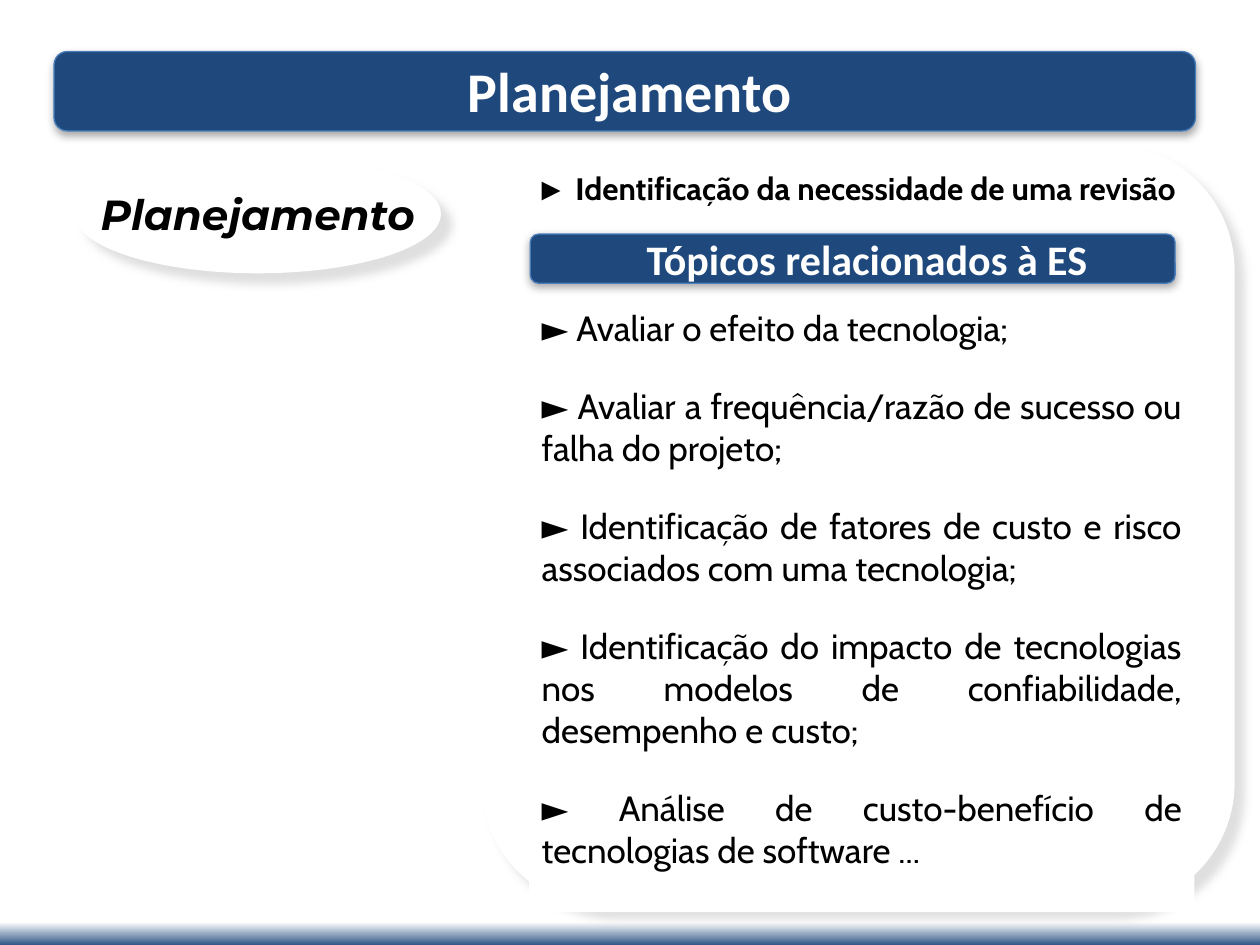
from lxml.etree import SubElement
from pptx import Presentation
from pptx.dml.color import RGBColor
from pptx.enum.shapes import MSO_SHAPE
from pptx.enum.text import MSO_ANCHOR, PP_ALIGN
from pptx.oxml.ns import qn
from pptx.util import Cm, Pt

WHITE = RGBColor(0xFF, 0xFF, 0xFF)
BLACK = RGBColor(0x00, 0x00, 0x00)
NAVY = RGBColor(0x1F, 0x49, 0x7D)
BORDER = RGBColor(0x4A, 0x7E, 0xBB)
SILVER = RGBColor(0xC0, 0xC0, 0xC0)

SOFT_SHADOW = {"color": SILVER, "alpha": 50, "distance": 8.5, "angle": 45}
BANNER_SHADOW = {"color": BLACK, "alpha": 35, "distance": 1.8, "angle": 90}

TOPICS = [
    "Avaliar o efeito da tecnologia;",
    "Avaliar a frequência/razão de sucesso ou falha do projeto;",
    "Identificação de fatores de custo e risco associados com uma tecnologia;",
    "Identificação do impacto de tecnologias nos modelos de confiabilidade, "
    "desempenho e custo;",
    "Análise de custo-benefício de tecnologias de software ...",
]


def add_shadow(shape, color, alpha, distance, angle):
    effects = shape._element.spPr.find(qn("a:effectLst"))
    shadow = SubElement(effects, qn("a:outerShdw"), blurRad=str(Pt(5)),
                        dist=str(Pt(distance)), dir=str(angle * 60000),
                        algn="ctr", rotWithShape="0")
    tint = SubElement(shadow, qn("a:srgbClr"), val=str(color))
    SubElement(tint, qn("a:alpha"), val=str(alpha * 1000))


def add_box(slide, kind, box, fill, line=None, shadow=None):
    """Add a preset shape; box is left, top, width and height in cm."""
    shape = slide.shapes.add_shape(kind, *map(Cm, box))
    shape.shadow.inherit = False
    shape.fill.solid()
    shape.fill.fore_color.rgb = fill
    if line is None:
        shape.line.fill.background()
    else:
        shape.line.color.rgb = line
        shape.line.width = Pt(0.75)
    if shadow:
        add_shadow(shape, **shadow)
    return shape


def add_banner(slide, box):
    return add_box(slide, MSO_SHAPE.ROUNDED_RECTANGLE, box, NAVY, BORDER, BANNER_SHADOW)


def set_frame(shape, **values):
    for name, value in values.items():
        setattr(shape.text_frame, name, value)


def add_run(paragraph, text, color, **font):
    run = paragraph.add_run()
    run.text = text
    run.font.color.rgb = color
    for name, value in font.items():
        setattr(run.font, name, value)


def add_footer(slide, box):
    footer = add_box(slide, MSO_SHAPE.RECTANGLE, box, NAVY)
    footer.fill.gradient()
    footer.fill.gradient_angle = 270
    for stop, position, color in zip(footer.fill.gradient_stops, (0, 1), (WHITE, NAVY)):
        stop.position = position
        stop.color.rgb = color


def add_topic_list(slide, box):
    shape = add_box(slide, MSO_SHAPE.RECTANGLE, box, WHITE)
    set_frame(shape, word_wrap=True, vertical_anchor=MSO_ANCHOR.TOP, margin_top=Cm(1.73))
    frame = shape.text_frame
    for index, topic in enumerate(TOPICS):
        paragraph = frame.add_paragraph() if index else frame.paragraphs[0]
        paragraph.alignment = PP_ALIGN.JUSTIFY
        paragraph.space_before = Pt(20.5 if index else 0)
        add_run(paragraph, f"► {topic}", BLACK, name="Cabin", size=Pt(20))


def add_topic_panel(slide, box):
    left, top, width, height = box
    add_box(slide, MSO_SHAPE.ROUNDED_RECTANGLE, box, WHITE, shadow=SOFT_SHADOW)
    add_topic_list(slide, (left + 0.97, top + 1.53, 13.41, 13.94))

    heading = slide.shapes.add_textbox(Cm(left + 1.1), Cm(top + 0.48), Cm(13), Cm(0.77))
    set_frame(heading, word_wrap=False, margin_left=0, margin_right=0,
              margin_top=0, margin_bottom=0)
    paragraph = heading.text_frame.paragraphs[0]
    paragraph.alignment = PP_ALIGN.LEFT
    add_run(paragraph, "► I", BLACK, name="Arial", size=Pt(18), bold=True)
    add_run(paragraph, "dentificação da necessidade de uma revisão", BLACK,
            name="Cabin", size=Pt(18), bold=True)

    banner = add_banner(slide, (left + 0.99, top + 1.8, 13, 0.99))
    set_frame(banner, word_wrap=True, vertical_anchor=MSO_ANCHOR.MIDDLE,
              margin_left=Cm(2.3), margin_top=0, margin_bottom=0)
    paragraph = banner.text_frame.paragraphs[0]
    paragraph.alignment = PP_ALIGN.LEFT
    add_run(paragraph, "Tópicos relacionados à ES", WHITE,
            name="Calibri", size=Pt(24), bold=True)


def add_title(slide, box):
    left, top, width, height = box
    add_banner(slide, box)
    title = slide.shapes.add_textbox(Cm(left - 1.14), Cm(top - 0.02), Cm(25.5), Cm(height))
    set_frame(title, word_wrap=True)
    paragraph = title.text_frame.paragraphs[0]
    paragraph.alignment = PP_ALIGN.CENTER
    add_run(paragraph, "Planejamento", WHITE, name="Calibri", size=Pt(32), bold=True)


def add_phase(slide, box):
    phase = add_box(slide, MSO_SHAPE.OVAL, box, WHITE, shadow=SOFT_SHADOW)
    set_frame(phase, word_wrap=False, vertical_anchor=MSO_ANCHOR.MIDDLE)
    paragraph = phase.text_frame.paragraphs[0]
    paragraph.alignment = PP_ALIGN.CENTER
    add_run(paragraph, "Planejamento", BLACK, name="Montserrat", size=Pt(24),
            bold=True, italic=True)


def main():
    presentation = Presentation()
    presentation.slide_width = Cm(25.4)
    presentation.slide_height = Cm(19.05)
    slide = presentation.slides.add_slide(presentation.slide_layouts[6])
    add_footer(slide, (0, 18.59, 25.4, 0.5))
    add_topic_panel(slide, (9.7, 2.92, 15.19, 15.39))
    add_title(slide, (1.09, 1.04, 23.01, 1.6))
    add_phase(slide, (1.5, 3.12, 7.39, 2.39))
    presentation.save("out.pptx")


if __name__ == "__main__":
    main()
